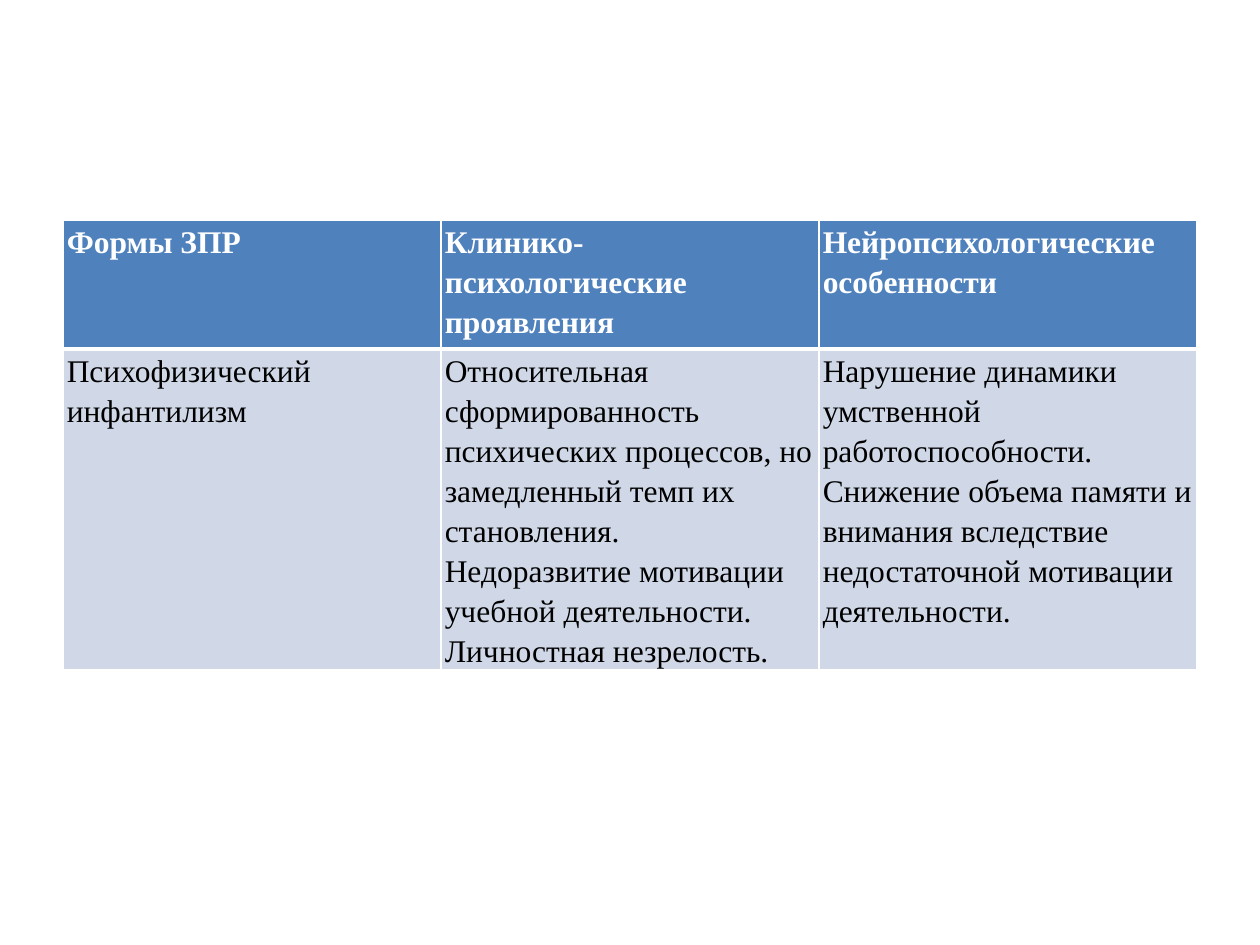
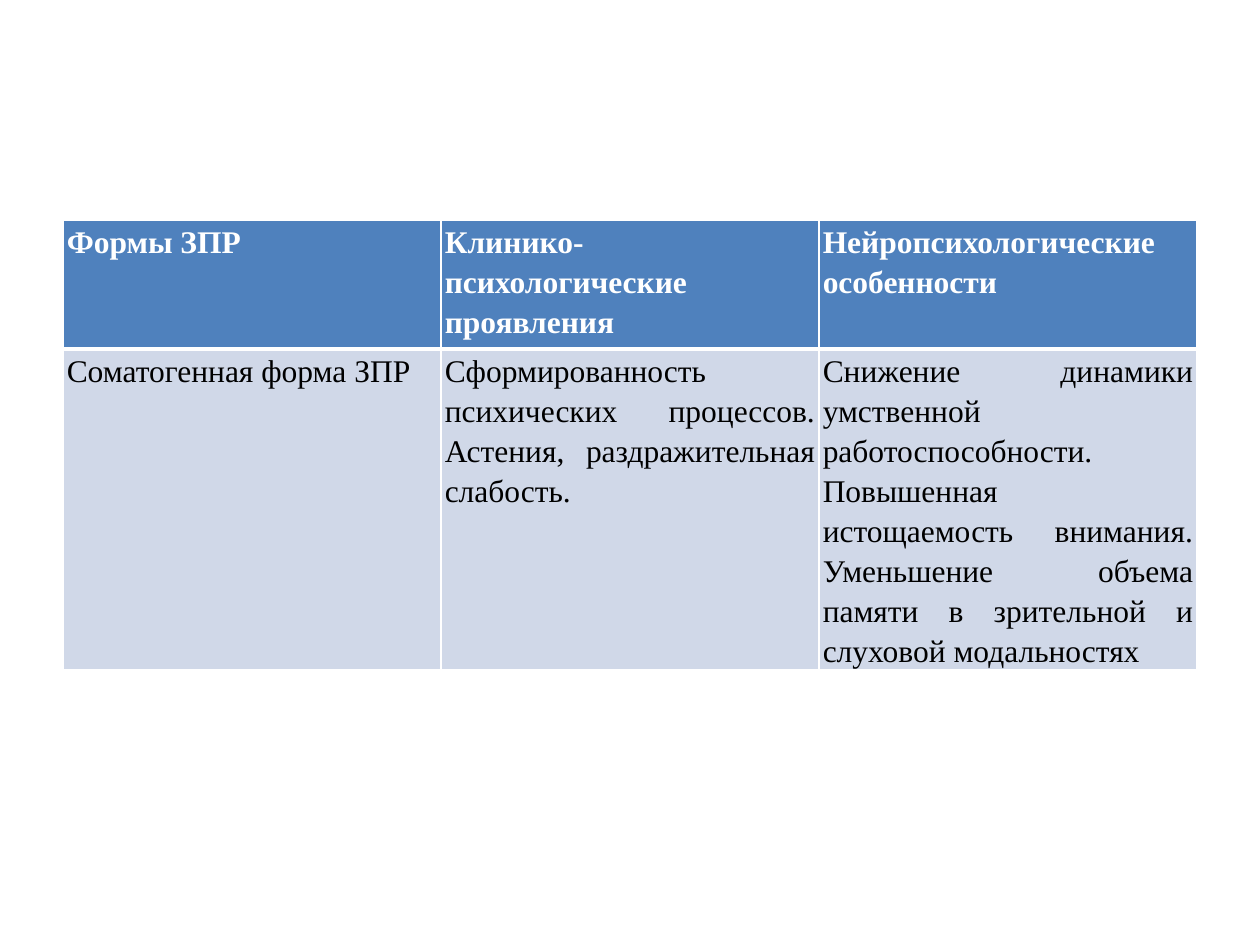
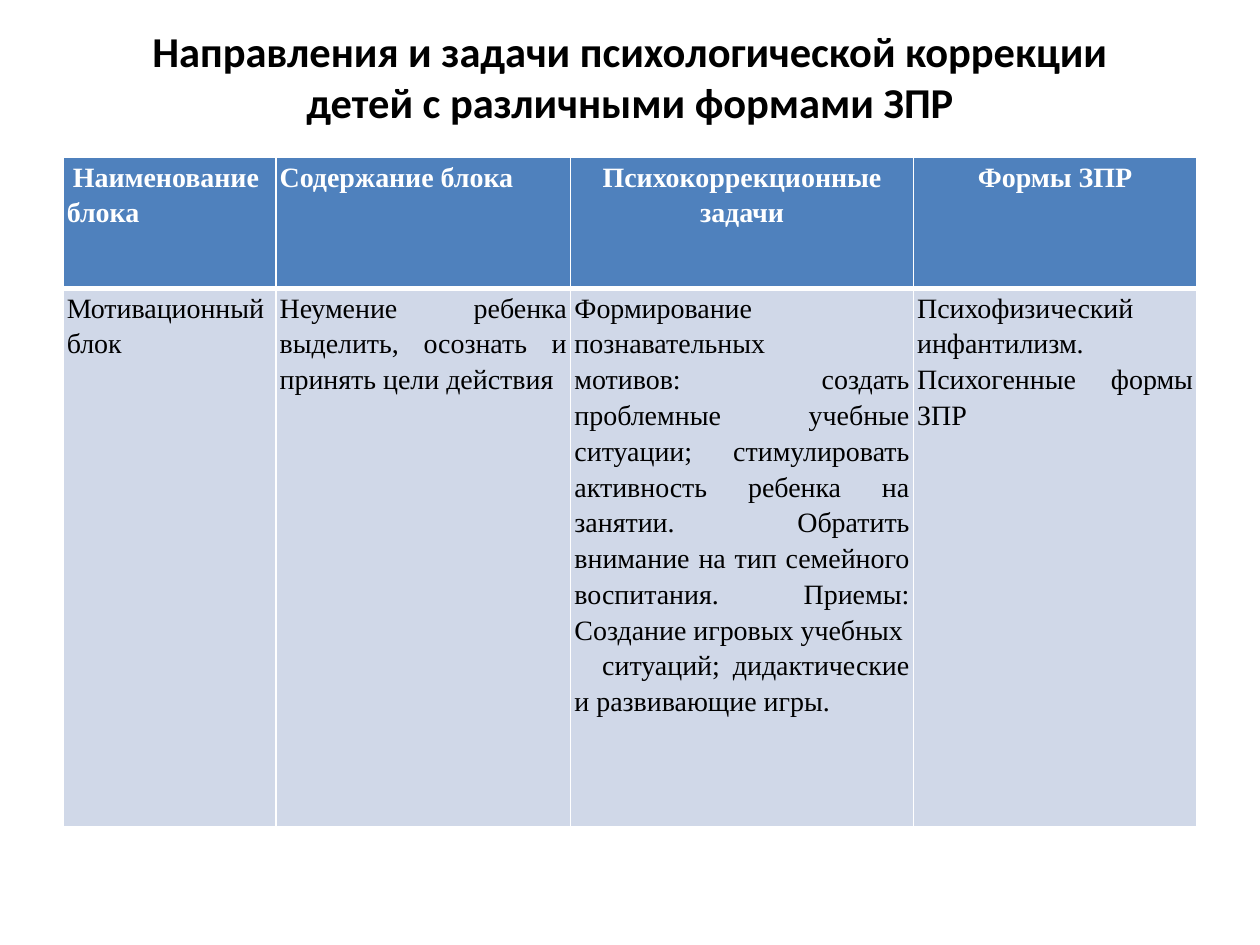
"""Three slides with tables on forms of developmental delay and their correction."""
from dataclasses import dataclass

from lxml import etree
from pptx import Presentation
from pptx import util as u
from pptx.dml.color import RGBColor
from pptx.enum import text
from pptx.oxml import ns

LEFT, CENTER, JUSTIFY = text.PP_ALIGN.LEFT, text.PP_ALIGN.CENTER, text.PP_ALIGN.JUSTIFY


@dataclass(frozen=True)
class Theme:
    """Colours, fonts and sizes shared by the slides."""
    header: str = "4F81BD"
    body: str = "D0D8E8"
    white: str = "FFFFFF"
    black: str = "000000"
    title_font: str = "Calibri"
    table_font: str = "Times New Roman"
    title_size: float = 24.3
    large: int = 18
    small: int = 16
    spacing: float = 1.15
    rule: int = 1
    header_rule: int = 3


@dataclass(frozen=True)
class Par:
    """A cell paragraph with its alignment and first-line indent in inches."""
    text: str
    align: text.PP_ALIGN = JUSTIFY
    indent: float = 0


class Deck:
    """The presentation, its theme and the current slide."""

    def __init__(self, theme):
        """Start an empty 10 by 7.5 inch presentation."""
        self.theme = theme
        self.prs = Presentation()
        self.prs.slide_width, self.prs.slide_height = u.Inches(10), u.Inches(7.5)
        self.s = None

    def slide(self, title=None):
        """Add a slide, with a title if one is given."""
        self.s = self.prs.slides.add_slide(self.prs.slide_layouts[5 if title else 6])
        if title:
            self.title(title)

    def title(self, words):
        """Place and format the title placeholder."""
        sp = self.s.shapes.title
        sp.left, sp.top = u.Inches(0.5), u.Inches(0.2)
        sp.width, sp.height = u.Inches(9), u.Inches(1.05)
        tf = sp.text_frame
        tf.text = words
        tf.auto_size = text.MSO_AUTO_SIZE.NONE
        tf.vertical_anchor = text.MSO_ANCHOR.TOP
        tf.margin_top = tf.margin_bottom = 0
        p = tf.paragraphs[0]
        p.alignment = CENTER
        self.style(p, self.theme.title_font, self.theme.title_size, self.theme.black, True)

    def style(self, p, name, size, color, bold):
        """Set the font of a paragraph."""
        p.font.name, p.font.size, p.font.bold = name, u.Pt(size), bold
        p.font.color.rgb = RGBColor.from_string(color)

    def table(self, top, widths, heights, rows, size):
        """Add a table whose first row is the header."""
        shape = self.s.shapes.add_table(
            len(rows), len(widths), u.Inches(0.5), u.Inches(top),
            u.Inches(sum(widths)), u.Inches(sum(heights)))
        table = shape.table
        for column, width in zip(table.columns, widths):
            column.width = u.Inches(width)
        for i, (row, height) in enumerate(zip(rows, heights)):
            table.rows[i].height = u.Inches(height)
            for j, pars in enumerate(row):
                self.cell(table.cell(i, j), pars, size, i == 0)

    def cell(self, cell, pars, size, is_header):
        """Fill one cell with text, borders and colour."""
        t = self.theme
        cell.margin_left = cell.margin_right = u.Inches(0.03)
        cell.margin_top = cell.margin_bottom = 0
        top, bottom = (t.rule, t.header_rule) if is_header else (t.header_rule, t.rule)
        for side, width in zip("LRTB", (t.rule, t.rule, top, bottom)):
            self.border(cell, side, width)
        cell.fill.solid()
        cell.fill.fore_color.rgb = RGBColor.from_string(t.header if is_header else t.body)
        tf = cell.text_frame
        for k, par in enumerate(pars):
            p = tf.add_paragraph() if k else tf.paragraphs[0]
            p.text, p.alignment, p.line_spacing = par.text, par.align, t.spacing
            if par.indent:
                p._p.get_or_add_pPr().set("indent", str(u.Inches(par.indent)))
            self.style(p, t.table_font, size, t.white if is_header else t.black, is_header)

    def border(self, cell, side, width):
        """Draw one white cell border."""
        ln = etree.SubElement(cell._tc.get_or_add_tcPr(), ns.qn(f"a:ln{side}"),
                              w=str(u.Pt(width)))
        fill = etree.SubElement(ln, ns.qn("a:solidFill"))
        etree.SubElement(fill, ns.qn("a:srgbClr"), val=self.theme.white)


FORMS_HEADER = [
    [Par("Формы ЗПР", LEFT)],
    [Par("Клинико- психологические проявления", LEFT)],
    [Par("Нейропсихологические особенности", LEFT)],
]
INFANTILISM = [
    [Par("Психофизический инфантилизм", LEFT)],
    [Par("Относительная сформированность психических процессов, но замедленный "
         "темп их становления.", LEFT),
     Par("Недоразвитие мотивации учебной деятельности. Личностная незрелость.", LEFT)],
    [Par("Нарушение динамики умственной работоспособности. Снижение объема памяти и "
         "внимания вследствие недостаточной мотивации деятельности.", LEFT)],
]
SOMATOGENIC = [
    [Par("Соматогенная форма ЗПР")],
    [Par("Сформированность психических процессов. Астения, раздражительная слабость.")],
    [Par("Снижение динамики умственной работоспособности. Повышенная истощаемость "
         "внимания. Уменьшение объема памяти в зрительной и слуховой модальностях")],
]
TASKS_HEADER = [
    [Par("Наименование ", CENTER), Par("блока")],
    [Par("Содержание блока")],
    [Par("Психокоррекционные задачи", CENTER)],
    [Par("Формы ЗПР", CENTER)],
]
MOTIVATION = [
    [Par("Мотивационный блок")],
    [Par("Неумение ребенка выделить, осознать и принять цели действия")],
    [Par("Формирование познавательных"),
     Par("мотивов: создать проблемные учебные\vситуации; стимулировать активность "
         "ребенка на занятии. Обратить внимание на тип семейного воспитания. "
         "Приемы: Создание игровых учебных"),
     Par("ситуаций; дидактические и развивающие игры.", indent=0.22)],
    [Par("Психофизический инфантилизм. Психогенные формы ЗПР")],
]


def main():
    """Build the slides and save them."""
    deck = Deck(Theme())
    for form in (INFANTILISM, SOMATOGENIC):
        deck.slide()
        deck.table(1.75, [3] * 3, [1.02, 2.54], [FORMS_HEADER, form], deck.theme.large)
    deck.slide("Направления и задачи психологической коррекции\v"
               "детей с различными формами ЗПР")
    deck.table(1.25, [1.69, 2.34, 2.72, 2.25], [1.04, 4.27],
               [TASKS_HEADER, MOTIVATION], deck.theme.small)
    deck.prs.save("out.pptx")


if __name__ == "__main__":
    main()
